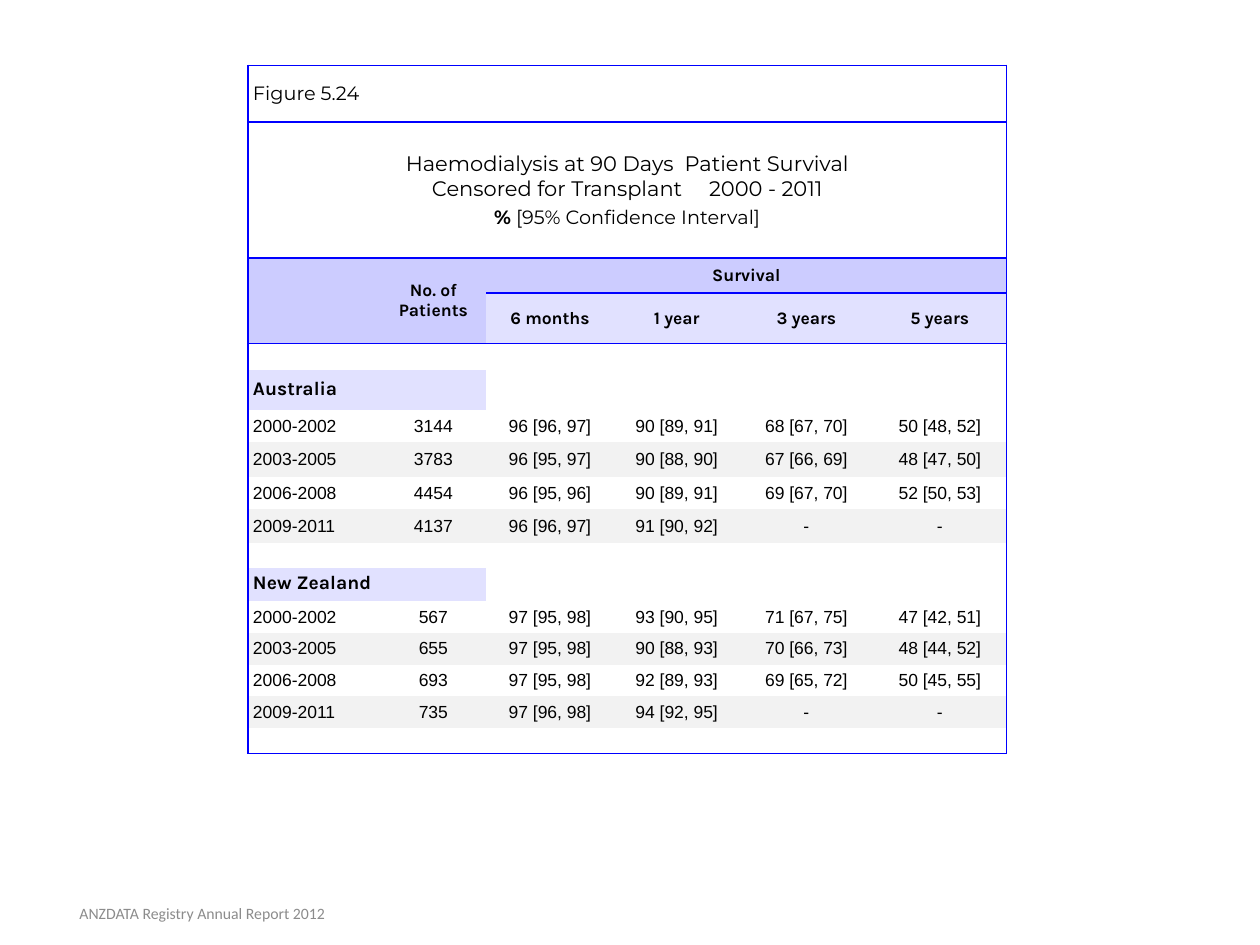
from lxml.etree import SubElement
from pptx import Presentation
from pptx.dml.color import RGBColor
from pptx.enum.text import MSO_ANCHOR, PP_ALIGN
from pptx.oxml.ns import qn
from pptx.util import Cm, Pt

COLOURS = {
    "text": "000000", "footer": "8C8C8C", "rule": "0000FF",
    "header": "CCCCFF", "subheader": "E1E1FF", "band": "F2F2F2",
}
FIGURE = {"name": "Montserrat", "size": Pt(11)}
TITLE = {"name": "Montserrat", "size": Pt(12)}
HEADING = {"name": "Karla", "size": Pt(10), "bold": True}
COUNTRY = {"name": "Karla", "size": Pt(11), "bold": True}
BODY = {"name": "Arial", "size": Pt(10), "bold": False}
FOOTER = {"name": "Calibri", "size": Pt(9)}

COLUMN_WIDTHS = [2.67, 2.13, 2.57, 2.54, 2.69, 2.69]
ROW_HEIGHTS = [1.14, 2.74, 0.71, 1.02, 0.53, 0.81, 0.64, 0.71, 0.64,
               0.69, 0.51, 0.66, 0.64, 0.64, 0.64, 0.64, 0.51]
LAST_COLUMN = len(COLUMN_WIDTHS) - 1
LAST_ROW = len(ROW_HEIGHTS) - 1
PERIODS = ["6 months", "1 year", "3 years", "5 years"]
SURVIVAL = {
    "Australia": (5, [
        ["2000-2002", "3144", "96 [96, 97]", "90 [89, 91]", "68 [67, 70]", "50 [48, 52]"],
        ["2003-2005", "3783", "96 [95, 97]", "90 [88, 90]", "67 [66, 69]", "48 [47, 50]"],
        ["2006-2008", "4454", "96 [95, 96]", "90 [89, 91]", "69 [67, 70]", "52 [50, 53]"],
        ["2009-2011", "4137", "96 [96, 97]", "91 [90, 92]", "-", "-"],
    ]),
    "New Zealand": (11, [
        ["2000-2002", "567", "97 [95, 98]", "93 [90, 95]", "71 [67, 75]", "47 [42, 51]"],
        ["2003-2005", "655", "97 [95, 98]", "90 [88, 93]", "70 [66, 73]", "48 [44, 52]"],
        ["2006-2008", "693", "97 [95, 98]", "92 [89, 93]", "69 [65, 72]", "50 [45, 55]"],
        ["2009-2011", "735", "97 [96, 98]", "94 [92, 95]", "-", "-"],
    ]),
}


def is_ruled_above(row, column):
    """Tell whether a rule runs along the top of this grid position."""
    return row in (0, 1, 2, 4, LAST_ROW + 1) or (row == 3 and column >= 2)


class Report:
    """Holds the page being built and the look of its elements."""

    def __init__(self, page):
        self.page = page

    def span(self, para, text, font, colour="text", spacing=None):
        """Add a run; spacing is extra letter spacing in points."""
        span = para.add_run()
        span.text = text
        for name, value in font.items():
            setattr(span.font, name, value)
        span.font.color.rgb = RGBColor.from_string(COLOURS[colour])
        if spacing:
            span.font._element.set("spc", str(spacing * 100))

    def paragraph(self, frame, spans, **layout):
        """Fill the first paragraph if it is empty, otherwise add one."""
        first = frame.paragraphs[0]
        para = frame.add_paragraph() if first.runs else first
        for name, value in layout.items():
            setattr(para, name, value)
        for span in spans:
            self.span(para, *span)

    def table(self, left, top):
        frame = self.page.shapes.add_table(
            len(ROW_HEIGHTS), len(COLUMN_WIDTHS), Cm(left), Cm(top),
            Cm(sum(COLUMN_WIDTHS)), Cm(sum(ROW_HEIGHTS)))
        table = frame.table
        table.first_row = table.horz_banding = False
        for column, width in zip(table.columns, COLUMN_WIDTHS):
            column.width = Cm(width)
        for row, height in zip(table.rows, ROW_HEIGHTS):
            row.height = Cm(height)
        return table

    def merge(self, table, row, column, height, width):
        table.cell(row, column).merge(
            table.cell(row + height - 1, column + width - 1))

    def borders(self, cell, row, column):
        bottom = row + (cell.span_height if cell.is_merge_origin else 1)
        right = column + (cell.span_width if cell.is_merge_origin else 1)
        sides = {
            "lnL": column == 0,
            "lnR": right > LAST_COLUMN,
            "lnT": is_ruled_above(row, column),
            "lnB": is_ruled_above(bottom, column),
        }
        properties = cell._tc.get_or_add_tcPr()
        for tag, ruled in sides.items():
            line = SubElement(properties, qn(f"a:{tag}"), w=str(Pt(1)))
            if ruled:
                fill = SubElement(line, qn("a:solidFill"))
                SubElement(fill, qn("a:srgbClr"), val=COLOURS["rule"])
            else:
                SubElement(line, qn("a:noFill"))

    def plain_cells(self, table):
        """Give every cell its margins, rules and a small empty line."""
        for row in range(LAST_ROW + 1):
            for column in range(LAST_COLUMN + 1):
                cell = table.cell(row, column)
                cell.vertical_anchor = MSO_ANCHOR.MIDDLE
                cell.margin_left = cell.margin_right = Cm(0.1)
                cell.margin_top = cell.margin_bottom = Cm(0.1 if row < 2 else 0.05)
                self.borders(cell, row, column)
                cell.fill.background()
                SubElement(cell.text_frame.paragraphs[0]._p,
                           qn("a:endParaRPr"), sz="800")

    def cell(self, cell, lines, font, fill=None, **layout):
        for line in lines:
            self.paragraph(cell.text_frame, [(line, font)], **layout)
        if fill:
            cell.fill.solid()
            cell.fill.fore_color.rgb = RGBColor.from_string(COLOURS[fill])

    def footer(self, text, left, top, width, height):
        box = self.page.shapes.add_textbox(Cm(left), Cm(top), Cm(width), Cm(height))
        box.text_frame.word_wrap = True
        box.text_frame.vertical_anchor = MSO_ANCHOR.MIDDLE
        self.paragraph(box.text_frame, [(text, FOOTER, "footer")],
                       alignment=PP_ALIGN.CENTER)


def fill_headings(report, table):
    centred = {"alignment": PP_ALIGN.CENTER}
    report.cell(table.cell(0, 0), ["Figure 5.24"], FIGURE)

    title = table.cell(1, 0).text_frame
    report.paragraph(title, [("Haemodialysis at 90 Days", TITLE),
                             (" ", TITLE, "text", 3),
                             ("Patient Survival", TITLE)], **centred)
    report.paragraph(title, [("Censored for Transplant", TITLE),
                             (" ", TITLE, "text", 12),
                             ("2000 - 2011", TITLE)], **centred)
    report.paragraph(title, [("%", {**FIGURE, "bold": True}),
                             (" [95% Confidence Interval]", FIGURE)],
                     space_before=Pt(2), **centred)

    report.cell(table.cell(2, 0), [], HEADING, "header")
    report.cell(table.cell(2, 1), ["No. of", "Patients"], HEADING, "header", **centred)
    report.cell(table.cell(2, 2), ["Survival"], HEADING, "header", **centred)
    for column, period in enumerate(PERIODS, start=2):
        report.cell(table.cell(3, column), [period], HEADING, "subheader", **centred)


def fill_survival(report, table):
    for country, (top, records) in SURVIVAL.items():
        report.cell(table.cell(top, 0), [country], COUNTRY, "subheader",
                    line_spacing=0.75)
        for index, record in enumerate(records):
            fill = "band" if index % 2 else None
            for column, value in enumerate(record):
                alignment = PP_ALIGN.CENTER if column else PP_ALIGN.LEFT
                report.cell(table.cell(top + 1 + index, column), [value], BODY,
                            fill, alignment=alignment)


def main():
    deck = Presentation()
    deck.slide_width, deck.slide_height = Cm(25.4), Cm(19.05)
    report = Report(deck.slides.add_slide(deck.slide_layouts[6]))

    table = report.table(5, 1.32)
    for area in [(0, 0, 1, 6), (1, 0, 1, 6), (2, 0, 2, 1), (2, 1, 2, 1),
                 (2, 2, 1, 4), (5, 0, 1, 2), (11, 0, 1, 2)]:
        report.merge(table, *area)
    report.plain_cells(table)
    fill_headings(report, table)
    fill_survival(report, table)

    report.footer("ANZDATA Registry Annual Report 2012", 0.05, 17.91, 8.05, 1.02)
    deck.save("out.pptx")


if __name__ == "__main__":
    main()
